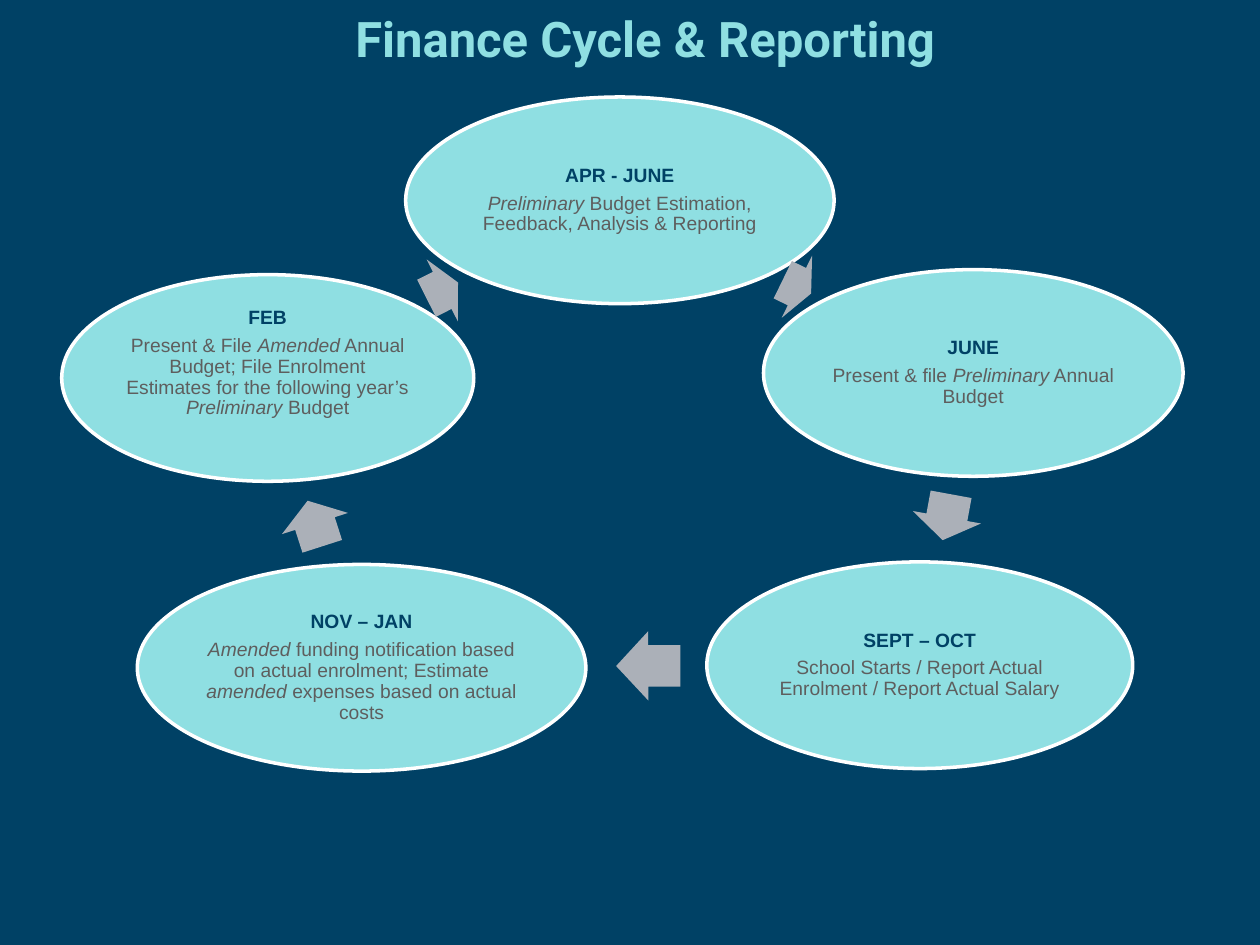
import dataclasses

import pptx
import pptx.dml.color
import pptx.enum.shapes
import pptx.enum.text
import pptx.util

SHAPE = pptx.enum.shapes.MSO_SHAPE
ALIGN = pptx.enum.text.PP_ALIGN
ANCHOR = pptx.enum.text.MSO_ANCHOR


@dataclasses.dataclass(frozen=True)
class Theme:
    back: str = "004165"
    aqua: str = "8FDFE2"
    body: str = "5E5E5E"
    arrow: str = "ABB0B8"
    edge: str = "FFFFFF"
    head_font: str = "Roboto"
    body_font: str = "Arial"
    head_size: int = 28
    body_size: int = 11


THEME = Theme()
WIDE, HIGH = pptx.util.Inches(10), pptx.util.Inches(7.5)
COL, ROW = WIDE / 100, HIGH / 75
OVAL_ROWS, ARROW_ROWS = 16.4, 5.5

# Left, top and width in cells; month; task (*italic*); extra room below in inches
STAGES = [
    (27.3, 0, 34, "APR - JUNE",
     "*Preliminary* Budget Estimation, Feedback, Analysis & Reporting", 0),
    (55.7, 13.7, 33.3, "JUNE", "Present & file *Preliminary* Annual Budget", 0),
    (51.2, 36.9, 33.8, "SEPT – OCT",
     "School Starts / Report Actual Enrolment / Report Actual Salary", 0),
    (6, 37.1, 35.6, "NOV – JAN",
     "*Amended* funding notification based on actual enrolment; "
     "Estimate *amended* expenses based on actual costs", 0),
    (0, 14.1, 32.7, "FEB",
     "Present & File *Amended* Annual Budget; File Enrolment Estimates "
     "for the following year’s *Preliminary* Budget", 0.23),
]
# Left, top and width in cells; turn in degrees
ARROWS = [
    (57.1, 12.3, 2.5, 26),
    (68.4, 30.6, 3.7, 100.4),
    (44, 42.4, 5.1, 179.8),
    (18.2, 31.1, 3.8, 252.2),
    (28.8, 12.6, 2.8, 333.3),
]


def rgb(code):
    return pptx.dml.color.RGBColor.from_string(code)


def cells(left, top, width, height):
    """Turn grid cells into slide lengths."""
    return [round(n) for n in (left * COL, top * ROW, width * COL, height * ROW)]


def write(para, text, *, font, size, color, bold=False, line=1.0, after=0):
    """Fill a centred paragraph; text between asterisks is italic."""
    para.alignment = ALIGN.CENTER
    para.line_spacing = line
    para.space_after = pptx.util.Pt(after)
    for turn, part in enumerate(text.split("*")):
        if part:
            run = para.add_run()
            run.text = part
            run.font.name = font
            run.font.size = pptx.util.Pt(size)
            run.font.color.rgb = rgb(color)
            run.font.bold = bold
            run.font.italic = turn % 2 == 1


def add_shape(slide, kind, box, fill):
    shape = slide.shapes.add_shape(kind, *cells(*box))
    shape.shadow.inherit = False
    shape.fill.solid()
    shape.fill.fore_color.rgb = rgb(fill)
    shape.line.fill.background()
    return shape


def add_stage(slide, box, month, task, room):
    oval = add_shape(slide, SHAPE.OVAL, box, THEME.aqua)
    oval.line.color.rgb = rgb(THEME.edge)
    oval.line.width = pptx.util.Pt(2)
    frame = oval.text_frame
    frame.word_wrap = True
    frame.vertical_anchor = ANCHOR.MIDDLE
    inset = pptx.util.Inches(0.02)
    frame.margin_left = frame.margin_right = frame.margin_top = inset
    frame.margin_bottom = inset + pptx.util.Inches(room)
    style = dict(font=THEME.body_font, size=THEME.body_size, line=0.9, after=4)
    write(frame.paragraphs[0], month, color=THEME.back, bold=True, **style)
    write(frame.add_paragraph(), task, color=THEME.body, **style)


def add_arrow(slide, box, turn):
    arrow = add_shape(slide, SHAPE.RIGHT_ARROW, box, THEME.arrow)
    arrow.adjustments[0] = 0.6
    arrow.adjustments[1] = 0.5
    arrow.rotation = turn


def add_cycle(slide, left, top):
    """Place the stages and the arrows between them from the given corner."""
    for stage, arrow in zip(STAGES, ARROWS):
        x, y, width, *words = stage
        add_stage(slide, (left + x, top + y, width, OVAL_ROWS), *words)
        x, y, width, turn = arrow
        add_arrow(slide, (left + x, top + y, width, ARROW_ROWS), turn)


def add_title(slide, box, text):
    title = slide.shapes.title
    title.left, title.top, title.width, title.height = cells(*box)
    frame = title.text_frame
    frame.word_wrap = True
    frame.auto_size = pptx.enum.text.MSO_AUTO_SIZE.NONE
    frame.vertical_anchor = ANCHOR.TOP
    write(frame.paragraphs[0], text, font=THEME.head_font,
          size=THEME.head_size, color=THEME.aqua, bold=True)


def main():
    deck = pptx.Presentation()
    deck.slide_width, deck.slide_height = WIDE, HIGH
    slide = deck.slides.add_slide(deck.slide_layouts.get_by_name("Title Only"))
    slide.background.fill.solid()
    slide.background.fill.fore_color.rgb = rgb(THEME.back)
    add_title(slide, (16.7, 0.2, 69, 5.7), "Finance Cycle & Reporting")
    add_cycle(slide, 4.9, 7.7)
    deck.save("out.pptx")


if __name__ == "__main__":
    main()
